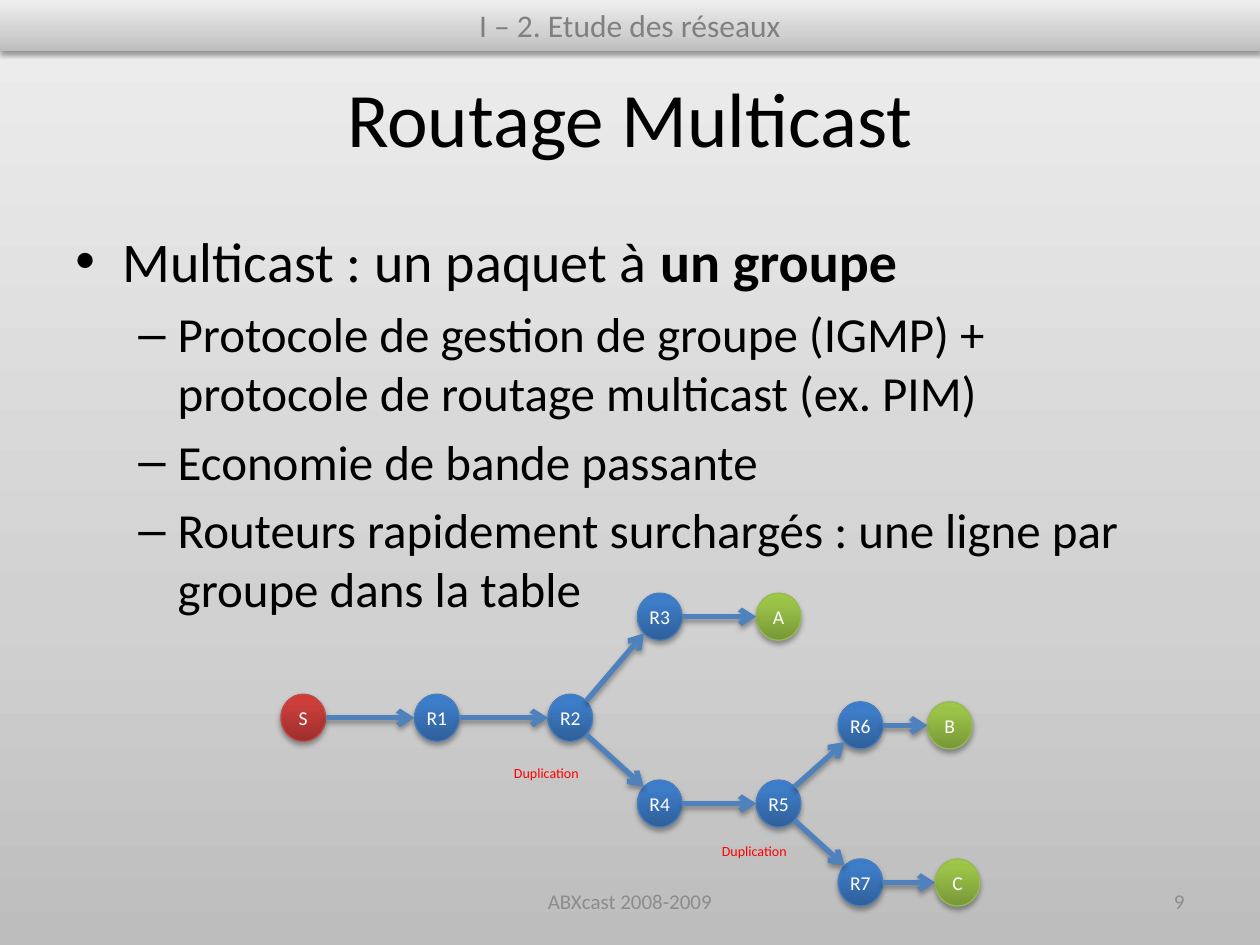
from math import sqrt

from lxml import etree
from pptx import Presentation
from pptx.dml.color import RGBColor
from pptx.enum.shapes import MSO_CONNECTOR, MSO_SHAPE
from pptx.enum.text import MSO_ANCHOR, PP_ALIGN
from pptx.oxml.ns import qn
from pptx.util import Pt

LEFT, CENTER, RIGHT = PP_ALIGN.LEFT, PP_ALIGN.CENTER, PP_ALIGN.RIGHT
TOP, MIDDLE = MSO_ANCHOR.TOP, MSO_ANCHOR.MIDDLE
ELLIPSE, RECTANGLE = MSO_SHAPE.OVAL, MSO_SHAPE.RECTANGLE
STRAIGHT = MSO_CONNECTOR.STRAIGHT
TITLE_ONLY = 5

THEME = {
    "font": "Calibri",
    "sizes": {"title": 44, "body": (32, 28), "header": 18, "footer": 12, "node": 11.2, "note": 8},
    "colors": {"text": "000000", "header": "808080", "footer": "8C8C8C", "node": "FFFFFF",
               "note": "FF0000", "arrow": "4F81BD"},
    "surface": ((0, "BDBDBD"), (35, "D1D1D1"), (100, "EEEEEE")),
    "nodes": {
        "source": (((0, "9C2F2D"), (80, "CB3E3A"), (100, "CE3B37")), "BF4C48"),
        "router": (((0, "2F5F99"), (80, "3D7CC7"), (100, "3A7CCB")), "4B7EBC"),
        "receiver": (((0, "779737"), (80, "9BC348"), (100, "9DC746")), "98B955"),
    },
}
SIZES, COLORS = THEME["sizes"], THEME["colors"]

HEADER = "I – 2. Etude des réseaux"
TITLE = "Routage Multicast"
BODY = [
    (0, [("Multicast : un paquet à ", False), ("un groupe", True)]),
    (1, [("Protocole de gestion de groupe (IGMP) + protocole de routage multicast (ex. PIM)", False)]),
    (1, [("Economie de bande passante", False)]),
    (1, [("Routeurs rapidement surchargés : une ligne par groupe dans la table", False)]),
]
BULLETS = [("•", 27, 27), ("–", 58.5, 22.5)]
LABELS = [
    ("ABXcast 2008-2009", (246, 500.4, 228, 28.8), "footer", CENTER, MIDDLE),
    ("9", (516, 500.4, 168, 28.8), "footer", RIGHT, MIDDLE),
    ("Duplication", (286.6, 433.4, 62, 17), "note", LEFT, TOP),
    ("Duplication", (405.4, 478.1, 62, 17), "note", LEFT, TOP),
]
NODE_CENTERS = {
    "S": (173.3, 410.2), "R1": (249.6, 410.2), "R2": (325.9, 410.2),
    "R3": (377, 352.4), "A": (444.9, 352.4),
    "R4": (377, 459.2), "R5": (444.9, 459.2),
    "R6": (491.7, 414.5), "B": (542.7, 414.5),
    "R7": (491.7, 504.3), "C": (547.2, 504.3),
}
LINKS = [("S", "R1"), ("R1", "R2"), ("R2", "R3"), ("R2", "R4"), ("R3", "A"), ("R4", "R5"),
         ("R5", "R6"), ("R5", "R7"), ("R6", "B"), ("R7", "C")]
NODE_WIDTH, NODE_HEIGHT = 25.5, 26.9


def points(*values):
    return [Pt(value) for value in values]


def apply(target, values):
    for name, value in values.items():
        setattr(target, name, value)


def add_xml(parent, tag, **attributes):
    child = etree.SubElement(parent, qn(tag))
    for name, value in attributes.items():
        child.set(name, str(value))
    return child


def set_gradient(fill, element, stops):
    fill.gradient()
    fill.gradient_angle = 90
    stop_list = next(element.iter(qn("a:gsLst")))
    for stop in list(stop_list):
        stop_list.remove(stop)
    for position, color in stops:
        add_xml(add_xml(stop_list, "a:gs", pos=position * 1000), "a:srgbClr", val=color)


def add_shadow(shape, distance, opacity):
    effects = add_xml(shape.element.spPr, "a:effectLst")
    shadow = add_xml(effects, "a:outerShdw", blurRad=Pt(3.1), dist=Pt(distance),
                     dir=5400000, rotWithShape=0)
    add_xml(add_xml(shadow, "a:srgbClr", val="000000"), "a:alpha", val=opacity * 1000)


def add_run(paragraph, text, size, color, bold=False):
    run = paragraph.add_run()
    run.text = text
    apply(run.font, {"name": THEME["font"], "size": Pt(size), "bold": bold})
    run.font.color.rgb = RGBColor.from_string(color)


def write_text(shape, text, style, alignment, anchor, color=None):
    apply(shape.text_frame, {"word_wrap": True, "vertical_anchor": anchor})
    paragraph = shape.text_frame.paragraphs[0]
    paragraph.alignment = alignment
    add_run(paragraph, text, SIZES[style], color or COLORS[style])


def add_body(slide):
    frame = slide.shapes.add_textbox(*points(36, 126, 648, 356.4)).text_frame
    frame.word_wrap = True
    for index, (level, runs) in enumerate(BODY):
        paragraph = frame.add_paragraph() if index else frame.paragraphs[0]
        size = SIZES["body"][level]
        apply(paragraph, {"level": level, "alignment": LEFT, "space_before": Pt(size * 0.2)})
        character, margin, hanging = BULLETS[level]
        properties = paragraph._p.get_or_add_pPr()
        properties.set("marL", str(Pt(margin)))
        properties.set("indent", str(-Pt(hanging)))
        add_xml(properties, "a:buFont", typeface="Arial")
        add_xml(properties, "a:buChar", char=character)
        for text, bold in runs:
            add_run(paragraph, text, size, COLORS["text"], bold)


def add_node(slide, name, center):
    kind = "source" if name == "S" else "router" if name.startswith("R") else "receiver"
    stops, outline = THEME["nodes"][kind]
    x, y = center
    node = slide.shapes.add_shape(ELLIPSE, *points(x - NODE_WIDTH / 2, y - NODE_HEIGHT / 2,
                                                   NODE_WIDTH, NODE_HEIGHT))
    set_gradient(node.fill, node.element, stops)
    node.line.color.rgb = RGBColor.from_string(outline)
    node.line.width = Pt(0.75)
    add_shadow(node, 1.8, 35)
    write_text(node, name, "node", CENTER, MIDDLE)
    apply(node.text_frame, {"margin_left": 0, "margin_right": 0, "word_wrap": False})


def add_link(slide, start, end):
    (x1, y1), (x2, y2) = NODE_CENTERS[start], NODE_CENTERS[end]
    direction = (y2 > y1) - (y2 < y1)
    reach = 1 / sqrt(2) if direction else 1
    dx = NODE_WIDTH / 2 * reach
    dy = NODE_HEIGHT / 2 * reach * direction
    link = slide.shapes.add_connector(STRAIGHT, *points(x1 + dx, y1 + dy, x2 - dx, y2 - dy))
    link.line.color.rgb = RGBColor.from_string(COLORS["arrow"])
    link.line.width = Pt(3)
    add_xml(link.element.spPr.find(qn("a:ln")), "a:tailEnd", type="arrow")
    add_shadow(link, 1.8, 35)


def add_header(slide):
    header = slide.shapes.add_shape(RECTANGLE, *points(0, 0, 720, 29))
    set_gradient(header.fill, header.element, THEME["surface"])
    header.line.fill.background()
    add_shadow(header, 1.6, 38)
    write_text(header, HEADER, "header", CENTER, TOP)


def main():
    presentation = Presentation()
    apply(presentation, {"slide_width": Pt(720), "slide_height": Pt(540)})
    slide = presentation.slides.add_slide(presentation.slide_layouts[TITLE_ONLY])
    set_gradient(slide.background.fill, slide.element, THEME["surface"])
    title = slide.shapes.title
    apply(title, dict(zip(("left", "top", "width", "height"), points(36, 21.6, 648, 90))))
    write_text(title, TITLE, "title", CENTER, MIDDLE, COLORS["text"])
    add_body(slide)
    for name, center in NODE_CENTERS.items():
        add_node(slide, name, center)
    for start, end in LINKS:
        add_link(slide, start, end)
    for text, box, style, alignment, anchor in LABELS:
        write_text(slide.shapes.add_textbox(*points(*box)), text, style, alignment, anchor)
    add_header(slide)
    presentation.save("out.pptx")


if __name__ == "__main__":
    main()
